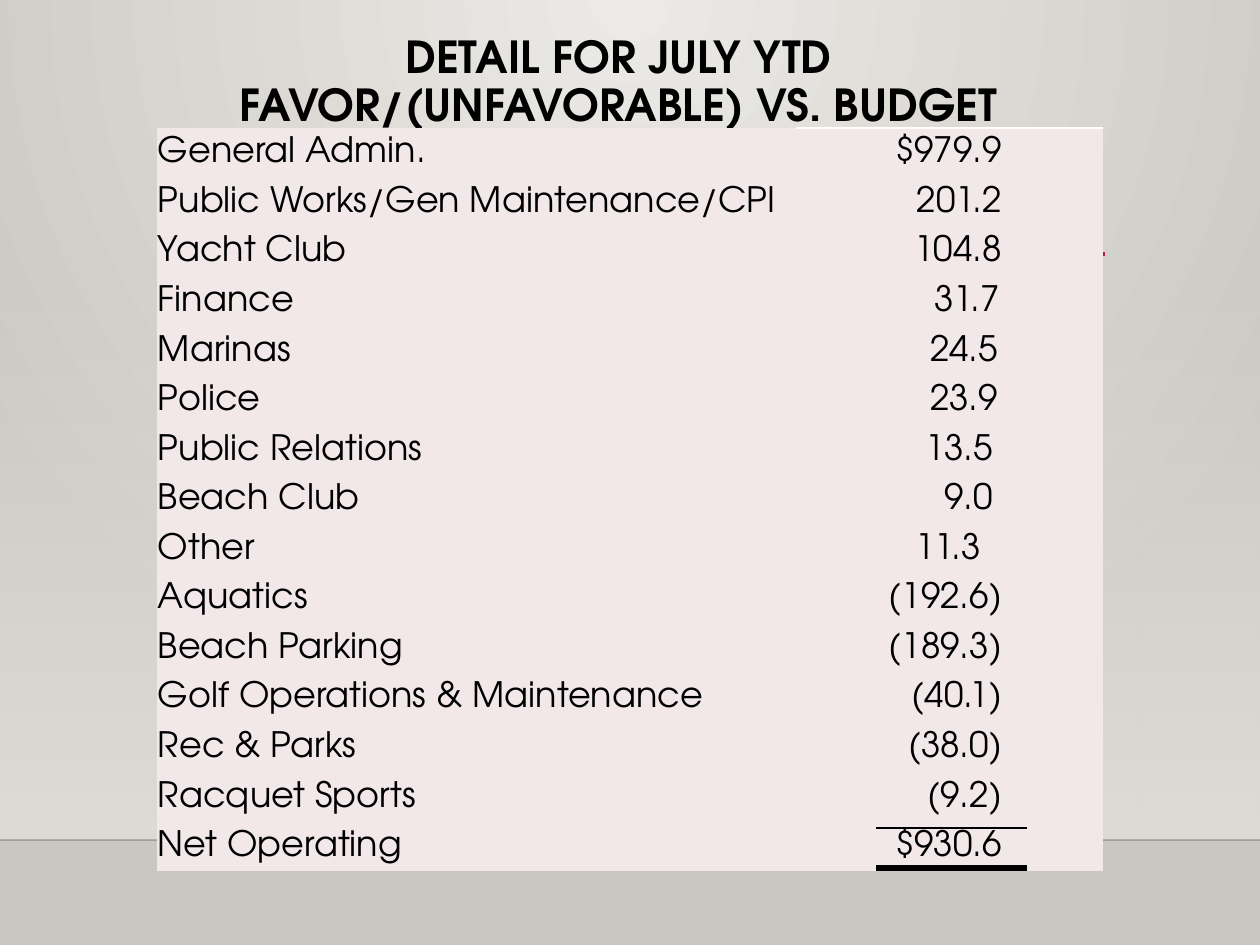
import pptx
import pptx.dml.color
import pptx.enum.shapes
import pptx.enum.text
import pptx.oxml
import pptx.oxml.ns
import pptx.util

SCALE = 914400 / 126
FONT = "TeX Gyre Adventor"
TABLE_STYLE = "{2D5ABB26-0587-4C30-8999-92F81FD0307C}"
TITLE = "DETAIL FOR JULY YTD\vFAVOR/(UNFAVORABLE) VS. BUDGET"
VARIANCES = [
    ("General Admin.", "$979.9", 101),
    ("Public Works/Gen Maintenance/CPI", "201.2", 101),
    ("Yacht Club", "104.8", 101),
    ("Finance", "31.7", 103),
    ("Marinas", "24.5", 105),
    ("Police", "23.9", 105),
    ("Public Relations", "13.5", 110),
    ("Beach Club", "9.0", 110),
    ("Other", "11.3", 122),
    ("Aquatics", "(192.6)", 101),
    ("Beach Parking", "(189.3)", 101),
    ("Golf Operations & Maintenance", "(40.1)", 101),
    ("Rec & Parks", "(38.0)", 101),
    ("Racquet Sports", "(9.2)", 101),
    ("Net Operating", "$930.6", 101),
]


def px(length):
    return pptx.util.Emu(round(length * SCALE))


def color(value):
    return pptx.dml.color.RGBColor.from_string(value)


def xml(tag, attributes="", inner=""):
    namespaces = pptx.oxml.ns.nsdecls("a")
    return pptx.oxml.parse_xml(f"<a:{tag} {namespaces} {attributes}>{inner}</a:{tag}>")


def find_all(element, tag):
    return element.findall(".//" + pptx.oxml.ns.qn(tag))


def style_font(font, size, bold=False):
    font.name = FONT
    font.size = pptx.util.Pt(size)
    font.bold = bold
    font.color.rgb = color("000000")


def paint_gradient(owner, element, stops, direction):
    owner.fill.solid()
    marks = "".join(
        f'<a:gs pos="{place * 1000}"><a:srgbClr val="{value}">'
        f'<a:alpha val="{opacity * 1000}"/></a:srgbClr></a:gs>'
        for place, value, opacity in stops
    )
    gradient = xml("gradFill", 'rotWithShape="1"', f"<a:gsLst>{marks}</a:gsLst>{direction}")
    solid = find_all(element, "a:solidFill")[0]
    solid.getparent().replace(solid, gradient)


def add_rule(page, left, top, width, value, weight, opacity=100):
    rule = page.shapes.add_connector(
        pptx.enum.shapes.MSO_CONNECTOR.STRAIGHT, px(left), px(top), px(left + width), px(top)
    )
    rule.line.color.rgb = color(value)
    rule.line.width = pptx.util.Pt(weight)
    if opacity < 100:
        paint = find_all(rule.element.spPr, "a:srgbClr")[0]
        paint.append(xml("alpha", f'val="{opacity * 1000}"'))
    rule.element.spPr.append(xml("effectLst"))


def add_backdrop(page, left, top, width, height):
    circle = '<a:path path="circle"><a:fillToRect l="43000" t="0" r="43000" b="100000"/></a:path>'
    stops = [(0, "ECEAE7", 100), (100, "CAC7C1", 100)]
    paint_gradient(page.background, page.element, stops, circle)
    wall = page.shapes.add_shape(
        pptx.enum.shapes.MSO_SHAPE.RECTANGLE, px(left), px(top + 277), px(width), px(height - 382)
    )
    wall.shadow.inherit = False
    wall.line.fill.background()
    stops = [(0, "DFDBD5", 0), (100, "DFDBD5", 100)]
    paint_gradient(wall, wall.element, stops, '<a:lin ang="5400000" scaled="0"/>')
    add_rule(page, left, top + 840, width, "000001", 1, 20)
    add_rule(page, left + 199, top + 254, 906, "B71E42", 2.5)


def add_title(page, left, top, width, height):
    title = page.shapes.title
    title.left, title.top, title.width, title.height = map(px, (left, top, width, height))
    frame = title.text_frame
    frame.text = TITLE
    frame.word_wrap = True
    frame.auto_size = pptx.enum.text.MSO_AUTO_SIZE.NONE
    frame.vertical_anchor = pptx.enum.text.MSO_ANCHOR.TOP
    para = frame.paragraphs[0]
    para.alignment = pptx.enum.text.PP_ALIGN.CENTER
    para.line_spacing = 0.9
    style_font(para.font, 25.2, True)
    for span in para.runs:
        style_font(span.font, 25.2, True)


def fill_cell(cell, text, alignment, right_inset):
    cell.text = text
    cell.fill.solid()
    cell.fill.fore_color.rgb = color("F3E8E9")
    cell.vertical_anchor = pptx.enum.text.MSO_ANCHOR.MIDDLE
    cell.margin_left = cell.margin_top = px(1)
    cell.margin_right = px(right_inset)
    cell.margin_bottom = 0
    para = cell.text_frame.paragraphs[0]
    para.alignment = alignment
    style_font(para.runs[0].font, 20)


def add_variance_table(page, left, top, width, height):
    frame = page.shapes.add_table(len(VARIANCES), 2, px(left), px(top), px(width), px(height))
    table = frame.table
    table.first_row = table.horz_banding = False
    find_all(frame.element, "a:tableStyleId")[0].text = TABLE_STYLE
    table.columns[0].width = px(639)
    table.columns[1].width = px(width - 639)
    for index, (name, amount, inset) in enumerate(VARIANCES):
        table.rows[index].height = px(height / len(VARIANCES))
        fill_cell(table.cell(index, 0), name, pptx.enum.text.PP_ALIGN.LEFT, 1)
        fill_cell(table.cell(index, 1), amount, pptx.enum.text.PP_ALIGN.RIGHT, inset)
    white = '<a:solidFill><a:srgbClr val="FFFFFF"/></a:solidFill>'
    find_all(frame.element, "a:tcPr")[1].insert(0, xml("lnT", 'w="12700"', white))
    add_rule(page, left + 719, top + 740, 151, "000000", 3)
    add_rule(page, left + 719, top + 700, 151, "000000", 1.25)


def main():
    deck = pptx.Presentation()
    deck.slide_width, deck.slide_height = px(1260), px(945)
    page = deck.slides.add_slide(deck.slide_layouts[5])
    add_backdrop(page, 0, 0, 1260, 945)
    add_title(page, 102, 29, 1033, 169)
    add_variance_table(page, 157, 128, 946, 744)
    deck.save("out.pptx")


if __name__ == "__main__":
    main()
